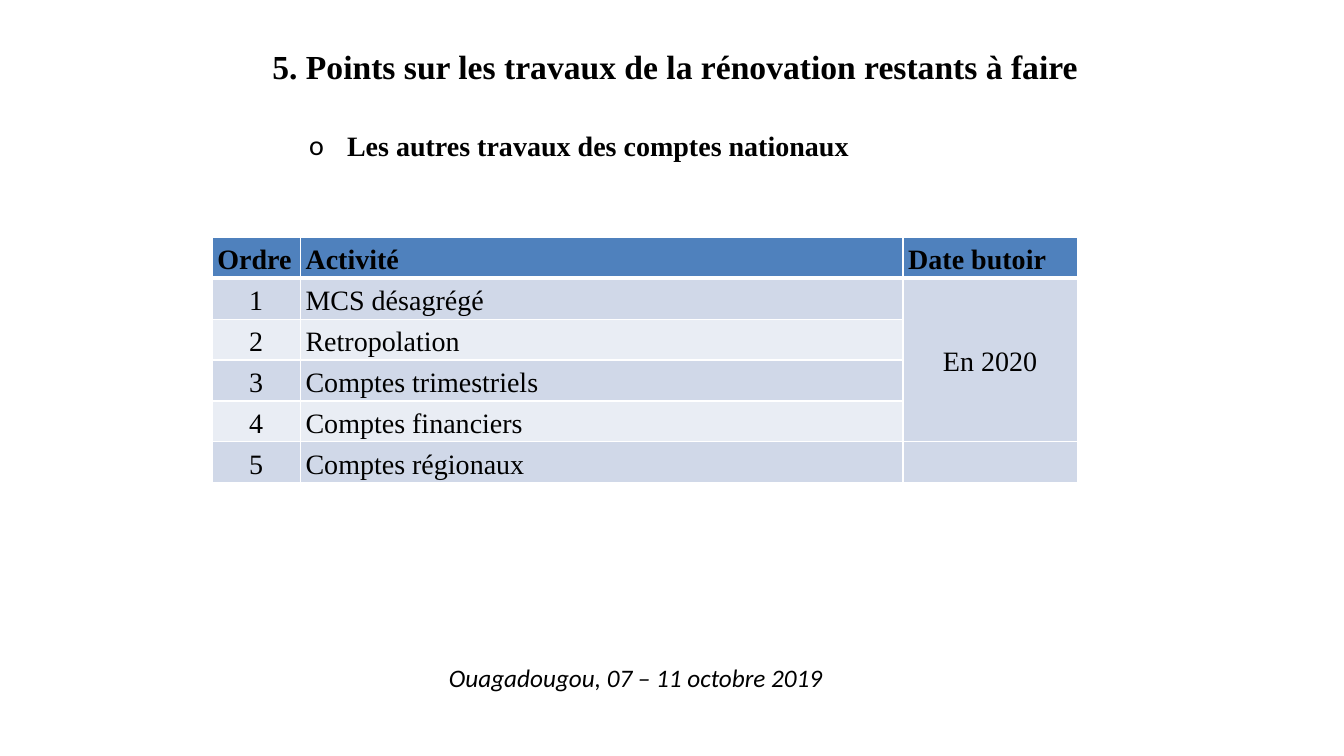
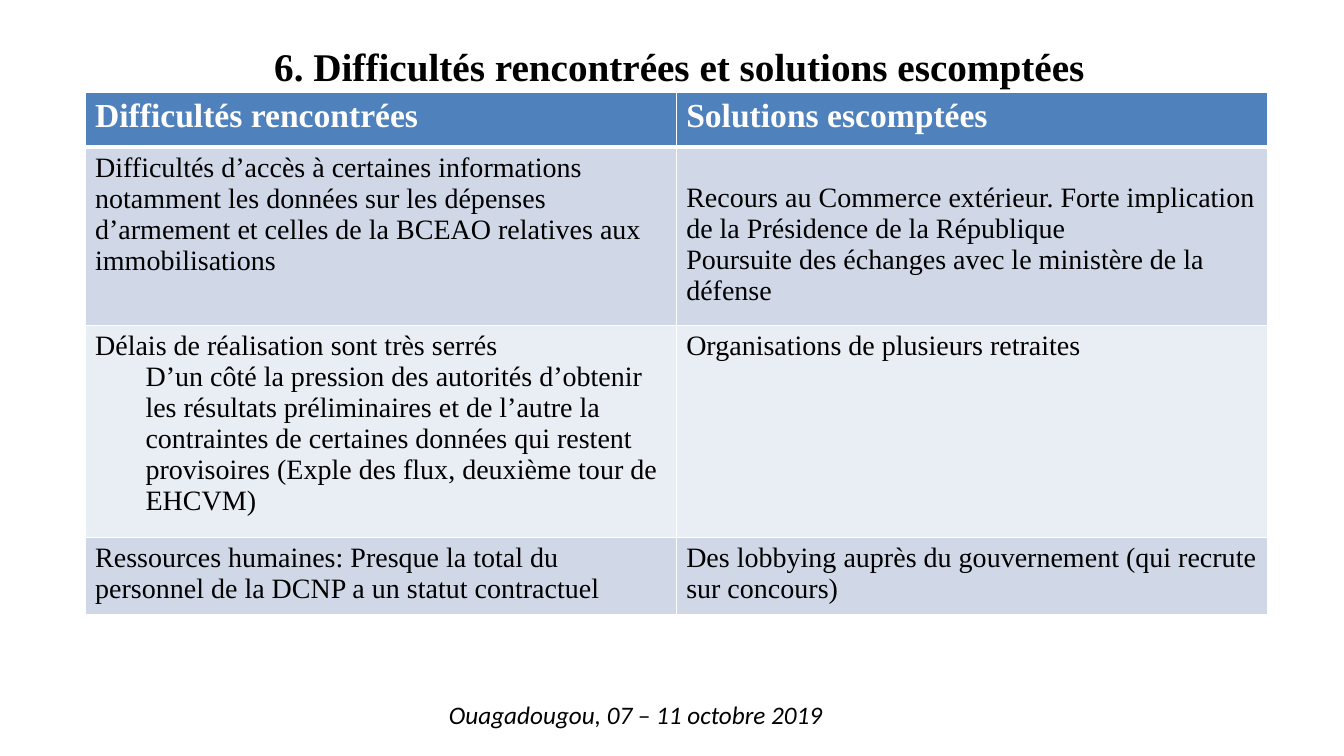
"""Builds two slides on the remaining work and the difficulties of the national accounts."""
from lxml import etree
from pptx import Presentation
from pptx import util as u
from pptx.dml.color import RGBColor
from pptx.enum import text
from pptx.oxml.ns import qn

PX = 9525
SERIF, SANS = "Times New Roman", "Calibri"
BLACK, WHITE, HEADER = "000000", "FFFFFF", "4F81BD"
BANDS = ("D0D8E8", "E9EDF4")
LEFT, CENTER = text.PP_ALIGN.LEFT, text.PP_ALIGN.CENTER
TOP, MIDDLE = text.MSO_ANCHOR.TOP, text.MSO_ANCHOR.MIDDLE
FOOTER = "Ouagadougou, 07 – 11 octobre 2019"

SUBTITLE = "Les autres travaux des comptes nationaux"
TASK_HEADS = ["Ordre", "Activité", "Date butoir"]
TASKS = ["MCS désagrégé", "Retropolation", "Comptes trimestriels",
         "Comptes financiers", "Comptes régionaux"]
DEADLINE, DEADLINE_ROWS = "En 2020", 4

ISSUE_HEADS = ["Difficultés rencontrées", "Solutions escomptées"]
ISSUES = [
    [["Difficultés d’accès à certaines informations notamment les données sur "
      "les dépenses d’armement et celles de la BCEAO relatives aux immobilisations"],
     ["Recours au Commerce extérieur. Forte implication de la Présidence de la République",
      "Poursuite des échanges avec le ministère de la défense"]],
    [["Délais de réalisation sont très serrés",
      ("D’un côté la pression des autorités d’obtenir les résultats préliminaires "
       "et de l’autre la contraintes de certaines données qui restent provisoires "
       "(Exple des flux, deuxième tour de EHCVM)", 48)],
     ["Organisations de plusieurs retraites"]],
    [["Ressources humaines: Presque la total du personnel de la DCNP a un statut contractuel"],
     ["Des lobbying auprès du gouvernement (qui recrute sur concours)"]],
]


def px(n):
    return u.Emu(n * PX)


def rgb(color):
    return RGBColor.from_string(color)


def write(tf, paras, size=20, font=SERIF, color=BLACK, bold=False, italic=False,
          align=LEFT, spacing=None, bullet=None, hang=0):
    """Fill a text frame; a paragraph is a string or a (string, left indent) pair."""
    for i, item in enumerate(paras):
        words, indent = (item, hang) if isinstance(item, str) else item
        p = tf.paragraphs[0] if i == 0 else tf.add_paragraph()
        p.alignment = align
        if spacing:
            p.line_spacing = spacing
        pPr = p._p.get_or_add_pPr()
        if indent:
            pPr.set("marL", str(px(indent)))
            pPr.set("indent", str(px(-hang)))
        if bullet:
            etree.SubElement(pPr, qn("a:buFont"), typeface=SANS)
            etree.SubElement(pPr, qn("a:buChar"), char=bullet)
        r = p.add_run()
        r.text = words
        f = r.font
        f.size, f.name, f.bold, f.italic = u.Pt(size), font, bold, italic
        f.color.rgb = rgb(color)


def add_text(slide, box, words, wrap=True, anchor=TOP, **fmt):
    """Add a text box with one paragraph."""
    tf = slide.shapes.add_textbox(*map(px, box)).text_frame
    tf.word_wrap, tf.vertical_anchor = wrap, anchor
    write(tf, [words], **fmt)


def add_slide(prs, title, size, title_left, footer_top):
    """Add a blank slide with the shared title and footer."""
    slide = prs.slides.add_slide(prs.slide_layouts[6])
    add_text(slide, (title_left, 21, 816, 84), title, anchor=MIDDLE,
             size=size, bold=True, align=CENTER)
    add_text(slide, (416, footer_top, 379, 38), FOOTER, wrap=False,
             size=18, font=SANS, italic=True, align=CENTER)
    return slide


def style_cell(cell, row):
    """Give a cell its white borders and its header or band fill."""
    tcPr = cell._tc.get_or_add_tcPr()
    widths = {"lnL": 1, "lnR": 1, "lnT": 3 if row == 1 else 1, "lnB": 3 if row == 0 else 1}
    for side, width in widths.items():
        ln = etree.SubElement(tcPr, qn("a:" + side), w=str(u.Pt(width)))
        fill = etree.SubElement(ln, qn("a:solidFill"))
        etree.SubElement(fill, qn("a:srgbClr"), val=WHITE)
    cell.fill.solid()
    cell.fill.fore_color.rgb = rgb(BANDS[(row - 1) % 2] if row else HEADER)


def add_grid(slide, left, top, widths, heights):
    """Add a styled empty table."""
    table = slide.shapes.add_table(len(heights), len(widths), px(left), px(top),
                                   px(sum(widths)), px(sum(heights))).table
    for col, width in zip(table.columns, widths):
        col.width = px(width)
    for r, height in enumerate(heights):
        table.rows[r].height = px(height)
        for cell in table.rows[r].cells:
            style_cell(cell, r)
    return table


def build_tasks(prs):
    slide = add_slide(prs, "5. Points sur les travaux de la rénovation restants à faire",
                      24, 235, 626)
    add_text(slide, (285, 118, 665, 42), SUBTITLE, bold=True, bullet="o", hang=36)
    rows = [TASK_HEADS] + [[str(n), task, ""] for n, task in enumerate(TASKS, 1)]
    rows[1][2] = DEADLINE
    table = add_grid(slide, 202, 226, [84, 574, 166], [39] * len(rows))
    table.cell(1, 2).merge(table.cell(DEADLINE_ROWS, 2))
    for r, row in enumerate(rows):
        for c, words in enumerate(row):
            cell = table.cell(r, c)
            cell.vertical_anchor = MIDDLE
            cell.margin_left = cell.margin_right = px(5)
            cell.margin_top = cell.margin_bottom = 0
            if words:
                write(cell.text_frame, [words], bold=r == 0, spacing=1.15,
                      align=CENTER if r and c != 1 else LEFT)


def build_issues(prs):
    slide = add_slide(prs, "6. Difficultés rencontrées et solutions escomptées", 28, 239, 661)
    table = add_grid(slide, 81, 88, [563, 563], [52, 170, 202, 73])
    for c, head in enumerate(ISSUE_HEADS):
        write(table.cell(0, c).text_frame, [head], size=24, color=WHITE, bold=True)
    for r, row in enumerate(ISSUES, 1):
        for c, paras in enumerate(row):
            write(table.cell(r, c).text_frame, paras)
    table.cell(1, 1).margin_top = px(34)


def main():
    prs = Presentation()
    prs.slide_width, prs.slide_height = px(1280), px(720)
    build_tasks(prs)
    build_issues(prs)
    prs.save("out.pptx")


if __name__ == "__main__":
    main()
